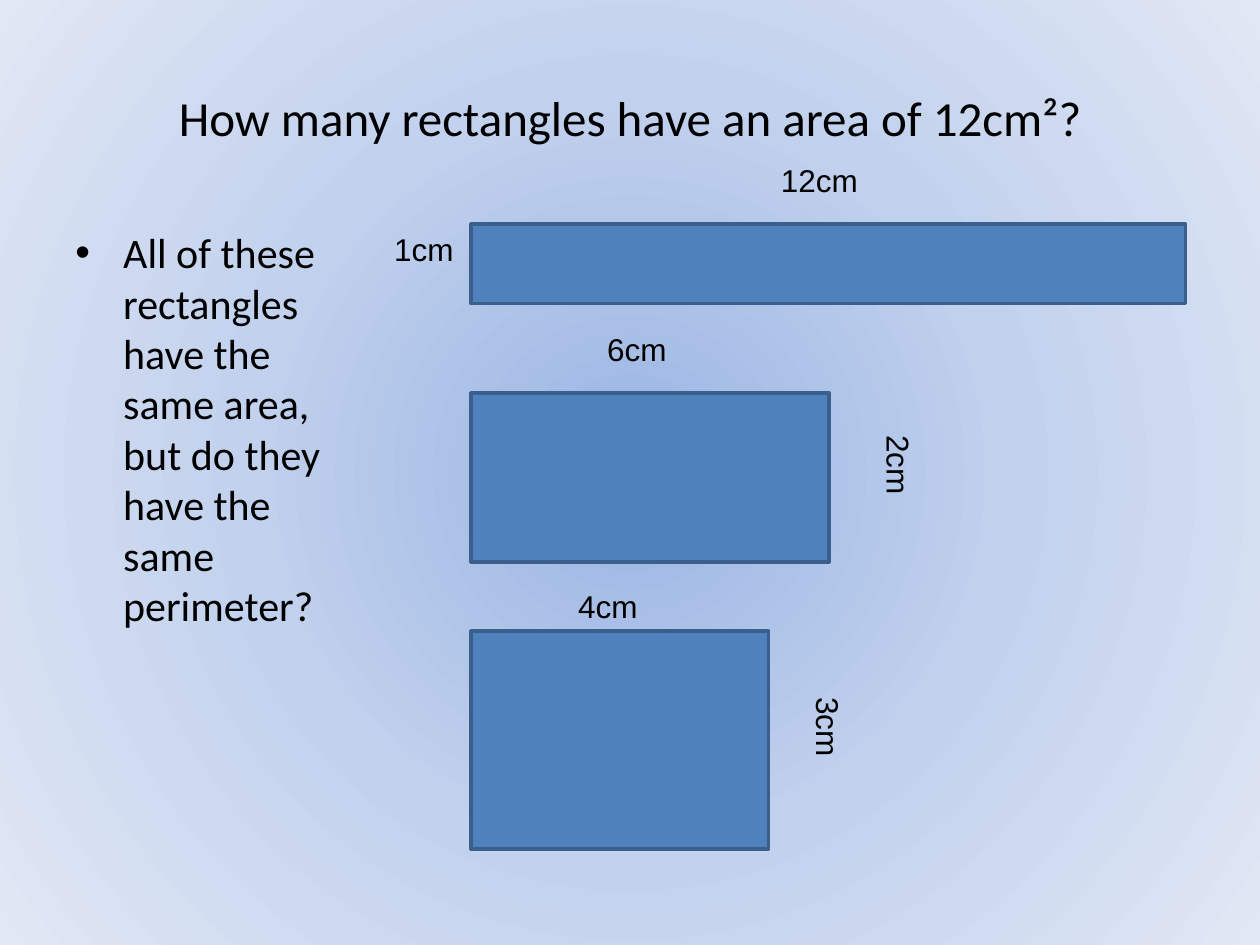
from pptx import Presentation
from pptx.dml.color import RGBColor
from pptx.enum.shapes import MSO_SHAPE
from pptx.enum.text import MSO_ANCHOR, PP_ALIGN
from pptx.oxml import parse_xml
from pptx.oxml.ns import nsdecls
from pptx.util import Inches, Pt

COLORS = {"text": "000000", "fill": "4F81BD", "line": "3A5F8C"}
GRADIENT = {0: "9AB5E4", 50: "C2D1ED", 100: "E1E8F5"}

prs = Presentation()
prs.slide_width, prs.slide_height = Inches(10), Inches(7.5)
s = prs.slides.add_slide(prs.slide_layouts[6])

# Radial background
stops = "".join(f'<a:gs pos="{pos * 1000}"><a:srgbClr val="{color}"/></a:gs>'
                for pos, color in GRADIENT.items())
s._element.cSld.insert(0, parse_xml(
    f'<p:bg {nsdecls("p", "a")}><p:bgPr><a:gradFill rotWithShape="1">'
    f'<a:gsLst>{stops}</a:gsLst><a:path path="circle">'
    '<a:fillToRect l="50000" t="50000" r="50000" b="50000"/></a:path>'
    '</a:gradFill><a:effectLst/></p:bgPr></p:bg>'))


def add_text(text, box, size, font):
    """Add a wrapped one-paragraph text box; return its shape and paragraph."""
    sp = s.shapes.add_textbox(*map(Inches, box))
    tf = sp.text_frame
    tf.word_wrap = True
    p = tf.paragraphs[0]
    r = p.add_run()
    r.text = text
    for name, value in {"size": Pt(size), "name": font}.items():
        setattr(r.font, name, value)
    r.font.color.rgb = RGBColor.from_string(COLORS["text"])
    return sp, p


# Title
sp, p = add_text("How many rectangles have an area of 12cm²?",
                 (0.5, 0.3, 9, 1.25), 28, "Calibri")
sp.text_frame.vertical_anchor = MSO_ANCHOR.MIDDLE
p.alignment = PP_ALIGN.CENTER

# Bulleted question
sp, p = add_text("All of these rectangles have the same area, "
                 "but do they have the same perimeter?",
                 (0.5, 1.75, 2.37, 4.95), 24, "Calibri")
p.space_before = Pt(4.8)
pPr = p._p.get_or_add_pPr()
pPr.set("marL", str(Inches(0.38)))
pPr.set("indent", str(Inches(-0.38)))
for bullet in ('buFont {} typeface="Arial"', 'buChar {} char="•"'):
    pPr.append(parse_xml(f'<a:{bullet.format(nsdecls("a"))}/>'))

# Rectangles share a left edge: top, width, height
for top, width, height in [(1.78, 5.67, 0.63), (3.12, 2.84, 1.34), (5.01, 2.36, 1.73)]:
    sp = s.shapes.add_shape(MSO_SHAPE.RECTANGLE,
                            *map(Inches, (3.74, top, width, height)))
    sp.shadow.inherit = False
    sp.fill.solid()
    sp.fill.fore_color.rgb = RGBColor.from_string(COLORS["fill"])
    sp.line.color.rgb = RGBColor.from_string(COLORS["line"])
    sp.line.width = Pt(2)

# Side lengths: text, left, top, width, rotation
for text, left, top, width, rotation in [
    ("1cm", 3.03, 1.78, 0.71, 0),
    ("12cm", 6.1, 1.23, 0.87, 0),
    ("6cm", 4.72, 2.57, 0.87, 0),
    ("2cm", 6.7, 3.59, 0.87, 90),
    ("3cm", 6.14, 5.67, 0.87, 90),
    ("4cm", 4.49, 4.61, 0.87, 0),
]:
    sp, p = add_text(text, (left, top, width, 0.4), 18, "Arial")
    sp.rotation = rotation

prs.save("out.pptx")
